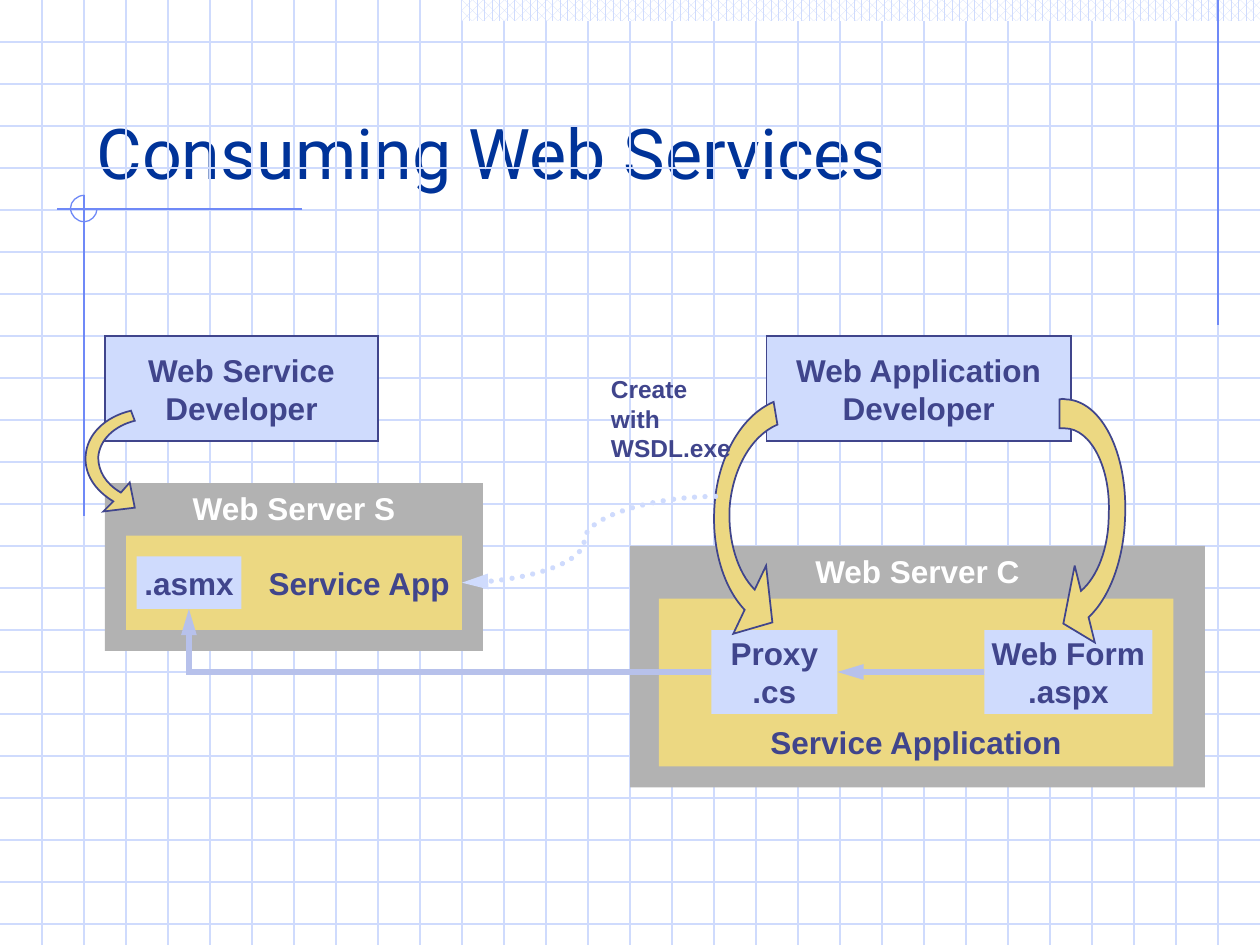
from lxml.etree import SubElement
from pptx import Presentation
from pptx.dml.color import RGBColor
from pptx.enum.dml import MSO_LINE, MSO_PATTERN
from pptx.enum.shapes import MSO_CONNECTOR as Link, MSO_SHAPE
from pptx.enum.text import MSO_ANCHOR as Anchor, PP_ALIGN as Align
from pptx.oxml.ns import qn
from pptx.util import Inches, Pt

NAVY, INDIGO = RGBColor(0x00, 0x33, 0x99), RGBColor(0x40, 0x45, 0x8C)
PALE, BLUE = RGBColor(0xCF, 0xDB, 0xFD), RGBColor(0x6F, 0x89, 0xF7)
LILAC, SAND = RGBColor(0xB7, 0xC1, 0xEB), RGBColor(0xEC, 0xD8, 0x82)
GREY, WHITE = RGBColor(0xB2, 0xB2, 0xB2), RGBColor(0xFF, 0xFF, 0xFF)

# Content: boxes as column, row, columns, rows on a grid of 1/12 inch
CELL = 1 / 12
COLUMNS, ROWS, GRID_STEP = 120, 90, 4
TITLE, TITLE_CELLS = "Consuming Web Services", (8, 4, 102, 15)
DEVELOPER = dict(fill=PALE, line=INDIGO)
SERVER = dict(fill=GREY, color=WHITE, anchor=Anchor.TOP)
BOXES = {
    "service developer": (["Web Service\nDeveloper"], (10, 32, 26, 10), DEVELOPER),
    "app developer": (["Web Application\nDeveloper"], (73, 32, 29, 10), DEVELOPER),
    "server S": (["Web Server S"], (10, 46, 36, 16), SERVER),
    "service app": (["Service App"], (12, 51, 32, 9), dict(fill=SAND, align=Align.RIGHT)),
    "asmx": ([".asmx"], (13, 53, 10, 5), dict(fill=PALE)),
    "server C": (["Web Server C"], (60, 52, 54.75, 23), SERVER),
    "application": (["Service Application"], (62.75, 57, 49, 16),
                    dict(fill=SAND, anchor=Anchor.BOTTOM)),
    "proxy": (["Proxy", ".cs"], (67.75, 60, 12, 8), dict(fill=PALE)),
    "web form": (["Web Form", ".aspx"], (93.75, 60, 16, 8), dict(fill=PALE)),
}
WSDL_NOTE = "Create with\nWSDL.exe"

# Outlines in inches: a start point, then lines (2 values) and curves (6 values)
CORNER_ARC = [(0.67, 1.55), (0.61, 1.55, 0.56, 1.6, 0.56, 1.65),
              (0.56, 1.71, 0.61, 1.76, 0.67, 1.76),
              (0.72, 1.76, 0.77, 1.71, 0.77, 1.66)]
CURVED_ARROWS = [
    [(0.96, 3.91), (0.84, 3.84, 0.78, 3.74, 0.78, 3.63),
     (0.79, 3.49, 0.91, 3.38, 1.07, 3.34), (1.04, 3.26),
     (0.83, 3.31, 0.69, 3.45, 0.68, 3.62), (0.67, 3.76, 0.75, 3.89, 0.9, 3.98),
     (0.82, 4.06), (1.07, 4.03), (1.03, 3.83)],
    [(8.58, 4.69), (8.71, 4.58, 8.8, 4.35, 8.8, 4.09),
     (8.82, 3.72, 8.66, 3.4, 8.45, 3.4), (8.44, 3.4, 8.43, 3.4, 8.41, 3.4),
     (8.41, 3.17), (8.43, 3.17, 8.44, 3.16, 8.46, 3.17),
     (8.74, 3.18, 8.95, 3.59, 8.93, 4.1), (8.92, 4.44, 8.81, 4.74, 8.64, 4.9),
     (8.69, 5.1), (8.44, 4.95), (8.53, 4.49)],
    [(5.99, 4.68), (5.85, 4.54, 5.78, 4.29, 5.79, 4.04),
     (5.81, 3.73, 5.96, 3.46, 6.17, 3.37), (6.14, 3.19),
     (5.88, 3.3, 5.69, 3.64, 5.67, 4.03), (5.65, 4.35, 5.74, 4.66, 5.91, 4.84),
     (5.82, 5.03), (6.13, 4.94), (6.08, 4.49)],
]
# Rules of the background in cells: from column, row to column, row
GRID = ([(0, row, COLUMNS, row) for row in range(GRID_STEP, ROWS, GRID_STEP)]
        + [(col, 0, col, ROWS) for col in range(GRID_STEP, COLUMNS, GRID_STEP)])
RULES = [(116, 0, 116, 31), (28.8, 19.9, 5.4, 19.9), (8, 18.6, 8, 49.1)]
LEFT, BOTTOM, RIGHT = 1, 2, 3  # connection sites of a rectangle

deck = Presentation()
deck.slide_width, deck.slide_height = Inches(10), Inches(7.5)
slide = deck.slides.add_slide(deck.slide_layouts[5])
shapes = slide.shapes


def in_cells(cells):
    return [Inches(c * CELL) for c in cells]


def draw_line(line, color, width):
    line.color.rgb, line.width = color, Pt(width)
    ln = line._get_or_add_ln()
    SubElement(ln, qn("a:miter"), lim="800000")
    return ln


def paint(shape, fill=None, line=None, width=1):
    shape.shadow.inherit = False
    if fill is None:
        shape.fill.background()
    else:
        shape.fill.solid()
        shape.fill.fore_color.rgb = fill
    if line is None:
        shape.line.fill.background()
    else:
        draw_line(shape.line, line, width)


def write(frame, paragraphs, color=INDIGO, size=18, font="Arial", bold=True,
          align=Align.CENTER, anchor=Anchor.MIDDLE, wrap=False):
    frame.word_wrap, frame.vertical_anchor = wrap, anchor
    look = dict(name=font, size=Pt(size), bold=bold)
    for i, text in enumerate(paragraphs):
        par = frame.add_paragraph() if i else frame.paragraphs[0]
        par.text, par.alignment = text, align
        for run in par.runs:
            for key, value in look.items():
                setattr(run.font, key, value)
            run.font.color.rgb = color


def add_box(paragraphs, cells, fill, line=None, **text_format):
    box = shapes.add_shape(MSO_SHAPE.RECTANGLE, *in_cells(cells))
    paint(box, fill, line)
    write(box.text_frame, paragraphs, **text_format)
    return box


def add_outline(outline, closed=True, **look):
    spots = [(Inches(x), Inches(y)) for segment in outline
             for x, y in zip(segment[::2], segment[1::2])]
    builder = shapes.build_freeform(*spots[0])
    builder.add_line_segments(spots[1:], close=closed)
    shape = builder.convert_to_shape()
    # Join the three points of each curve into one Bezier segment
    route = next(shape._element.iter(qn("a:path")))
    steps = iter(route.findall(qn("a:lnTo")))
    for segment in outline[1:]:
        step = next(steps)
        if len(segment) == 6:
            step.tag = qn("a:cubicBezTo")
            for extra in (next(steps), next(steps)):
                step.append(extra[0])
                route.remove(extra)
    paint(shape, **look)


def add_link(kind, ends, color, width, arrow=False):
    link = shapes.add_connector(kind, *ends)
    ln = draw_line(link.line, color, width)
    if arrow:
        SubElement(ln, qn("a:tailEnd"), type="triangle", w="med", len="lg")
    SubElement(link._element.spPr, qn("a:effectLst"))
    return link


# Background: grid, patterned band, rules and corner arc
for ends in GRID:
    add_link(Link.STRAIGHT, in_cells(ends), PALE, 0.75)
band = shapes.add_shape(MSO_SHAPE.RECTANGLE, *in_cells((44, 0, 76, 2)))
paint(band)
band.fill.patterned()
band.fill.pattern = MSO_PATTERN.PERCENT_60
band.fill.fore_color.rgb, band.fill.back_color.rgb = PALE, WHITE
for ends in RULES:
    add_link(Link.STRAIGHT, in_cells(ends), BLUE, 0.75)
add_outline(CORNER_ARC, closed=False, line=BLUE, width=0.75)

# Title
title = shapes.title
title.left, title.top, title.width, title.height = in_cells(TITLE_CELLS)
write(title.text_frame, [TITLE], color=NAVY, size=40, font="Roboto", bold=False,
      align=Align.LEFT, anchor=Anchor.BOTTOM, wrap=True)

# Developers, servers and their parts
parts = {name: add_box(text, cells, **look)
         for name, (text, cells, look) in BOXES.items()}

# Calls: web form to proxy, proxy to .asmx
proxy_call = add_link(Link.ELBOW, in_cells((67.75, 64, 18, 58)), LILAC, 3, arrow=True)
proxy_call._element.spPr.find(qn("a:prstGeom")).set("prst", "bentConnector2")
proxy_call.begin_connect(parts["proxy"], LEFT)
proxy_call.end_connect(parts["asmx"], BOTTOM)
form_call = add_link(Link.STRAIGHT, in_cells((93.75, 64, 79.75, 64)), LILAC, 3, arrow=True)
form_call.begin_connect(parts["web form"], LEFT)
form_call.end_connect(parts["proxy"], RIGHT)

# Arrows from the developers to what they build
for outline in CURVED_ARROWS:
    add_outline(outline, fill=SAND, line=INDIGO)

# Dotted link from the proxy's creation to the service, with its note
wsdl_link = add_link(Link.CURVE, map(Inches, (5.68, 3.94, 3.67, 4.62)), PALE, 3, arrow=True)
wsdl_link.line.dash_style = MSO_LINE.ROUND_DOT
wsdl_link.line._get_or_add_ln().set("cap", "rnd")
bend = wsdl_link._element.spPr.find(qn("a:prstGeom")).get_or_add_avLst()
SubElement(bend, qn("a:gd"), name="adj1", fmla="val 51700")
wsdl_link.end_connect(parts["service app"], RIGHT)
note = shapes.add_textbox(*map(Inches, (4.75, 2.92, 1.24, 0.57)))
write(note.text_frame, [WSDL_NOTE], size=14, align=Align.LEFT, anchor=Anchor.TOP, wrap=True)

deck.save("out.pptx")
